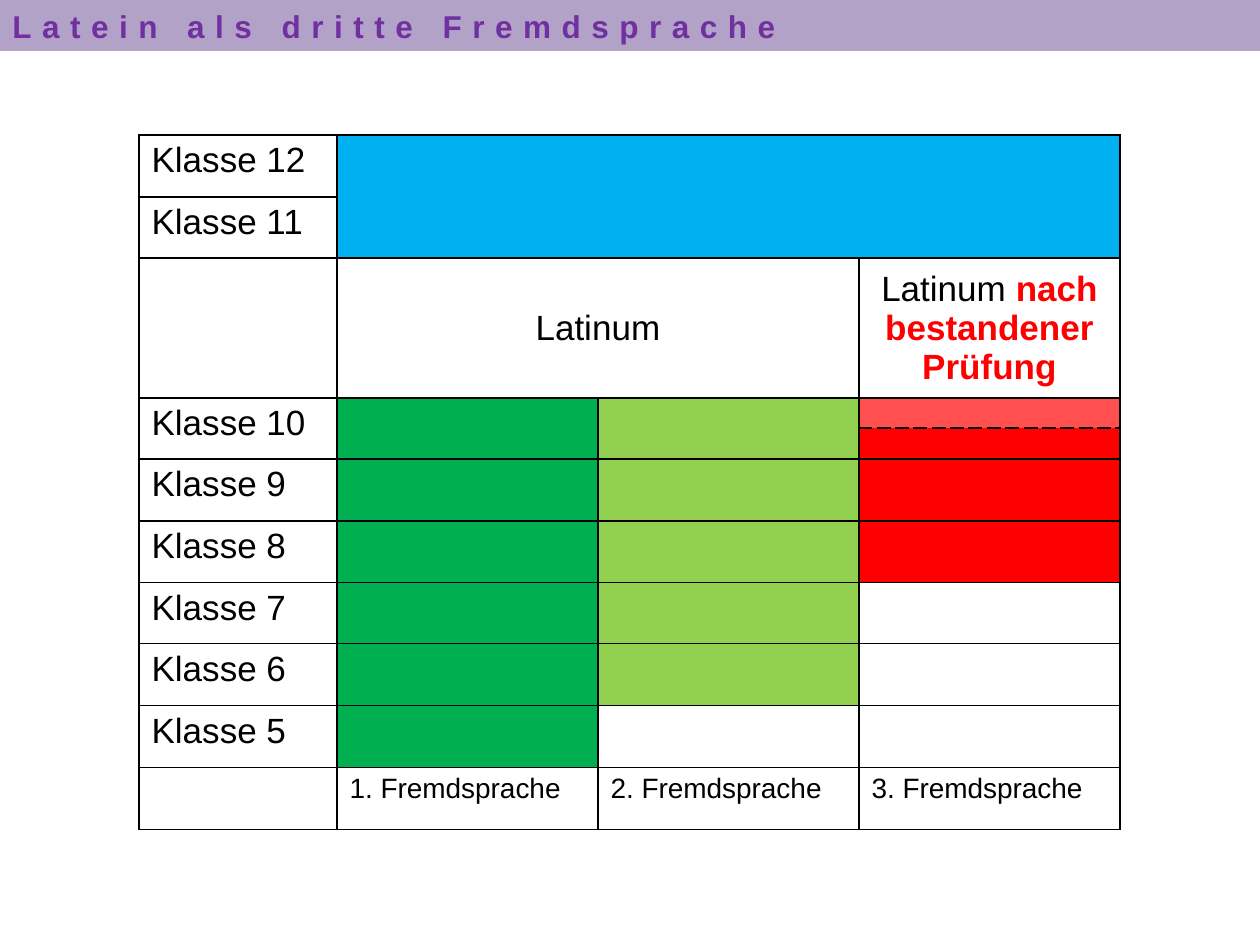
"""Build a slide that shows Latin as first, second or third foreign language by school year."""
from itertools import product

from lxml.etree import SubElement
from pptx import Presentation
from pptx.dml.color import RGBColor
from pptx.enum.shapes import MSO_SHAPE
from pptx.enum.text import MSO_ANCHOR, PP_ALIGN
from pptx.oxml.ns import qn
from pptx.util import Pt

EMU_PER_PX = 914400 / 126
BLACK = RGBColor(0x00, 0x00, 0x00)
PURPLE = RGBColor(0x70, 0x30, 0xA0)
LILAC = RGBColor(0xB3, 0xA2, 0xC7)
BLUE = RGBColor(0x00, 0xB0, 0xF0)
DARK_GREEN = RGBColor(0x00, 0xB0, 0x50)
LIGHT_GREEN = RGBColor(0x92, 0xD0, 0x50)
RED = RGBColor(0xFF, 0x00, 0x00)
PALE_RED = RGBColor(0xFF, 0x4F, 0x4F)

COLUMN_WIDTHS = [198, 261, 261, 261]
ROW_HEIGHTS = [62, 61, 140, 30, 31, 62, 62, 61, 62, 62, 62]
CLASS_ROWS = {12: 0, 11: 1, 10: 3, 9: 5, 8: 6, 7: 7, 6: 8, 5: 9}
EXAM_ROW, HALF_YEAR_ROW, LANGUAGE_ROW = 2, 3, 10
MERGES = [(0, 1, 1, 3), (2, 1, 2, 2)] + [(3, col, 4, col) for col in range(3)]
LESSONS = [(1, 3, 9, DARK_GREEN), (2, 3, 8, LIGHT_GREEN), (3, 4, 6, RED)]


def px(length):
    return round(length * EMU_PER_PX)


def style_font(font, size, color=BLACK, bold=False):
    font.name = "Arial"
    font.size = Pt(size)
    font.bold = bold
    font.color.rgb = color


def add_title(slide, text):
    bar = slide.shapes.add_shape(MSO_SHAPE.RECTANGLE, 0, 0, px(1260), px(51))
    bar.shadow.inherit = False
    bar.fill.solid()
    bar.fill.fore_color.rgb = LILAC
    bar.line.fill.background()
    title = bar.text_frame.paragraphs[0]
    title.alignment = PP_ALIGN.LEFT
    run = title.add_run()
    run.text = text
    style_font(title.font, 18, PURPLE, True)
    style_font(run.font, 18, PURPLE, True)
    run.font._element.set("spc", "600")


def border_cell(cell, dashed_side=None):
    properties = cell._tc.get_or_add_tcPr()
    for side in ("lnL", "lnR", "lnT", "lnB"):
        line = SubElement(properties, qn(f"a:{side}"), w=str(Pt(1)))
        color = SubElement(line, qn("a:solidFill"))
        SubElement(color, qn("a:srgbClr"), val=str(BLACK))
        dash = "sysDash" if side == dashed_side else "solid"
        SubElement(line, qn("a:prstDash"), val=dash)


def fill_cell(cell, color):
    cell.fill.solid()
    cell.fill.fore_color.rgb = color


def prepare_cell(cell, dashed_side=None):
    border_cell(cell, dashed_side)
    cell.fill.background()
    cell.margin_top = cell.margin_bottom = px(6)
    cell.text_frame.paragraphs[0]._p.get_or_add_endParaRPr().set("sz", "800")


def write_cell(cell, *parts, size=20, centered=False):
    paragraph = cell.text_frame.paragraphs[0]
    for text, color, bold in parts:
        run = paragraph.add_run()
        run.text = text
        style_font(run.font, size, color, bold)
    if centered:
        paragraph.alignment = PP_ALIGN.CENTER
        cell.vertical_anchor = MSO_ANCHOR.MIDDLE


def add_school_table(slide):
    rows, columns = len(ROW_HEIGHTS), len(COLUMN_WIDTHS)
    frame = slide.shapes.add_table(
        rows, columns, px(139), px(135), px(sum(COLUMN_WIDTHS)), px(sum(ROW_HEIGHTS)))
    table = frame.table
    table.first_row = table.horz_banding = False
    for column, width in zip(table.columns, COLUMN_WIDTHS):
        column.width = px(width)
    for row, height in zip(table.rows, ROW_HEIGHTS):
        row.height = px(height)

    dashed_sides = {(HALF_YEAR_ROW, 3): "lnB", (HALF_YEAR_ROW + 1, 3): "lnT"}
    for place in product(range(rows), range(columns)):
        prepare_cell(table.cell(*place), dashed_sides.get(place))
    for top, left, bottom, right in MERGES:
        table.cell(top, left).merge(table.cell(bottom, right))
    return table


def fill_school_table(table):
    for year, row in CLASS_ROWS.items():
        write_cell(table.cell(row, 0), (f"Klasse {year}", BLACK, False))
    for language in (1, 2, 3):
        write_cell(table.cell(LANGUAGE_ROW, language),
                   (f"{language}. Fremdsprache", BLACK, False), size=16)
    write_cell(table.cell(EXAM_ROW, 1), ("Latinum", BLACK, False), centered=True)
    write_cell(table.cell(EXAM_ROW, 3), ("Latinum ", BLACK, False),
               ("nach bestandener Prüfung", RED, True), centered=True)

    fill_cell(table.cell(0, 1), BLUE)
    fill_cell(table.cell(HALF_YEAR_ROW, 3), PALE_RED)
    for column, first, last, color in LESSONS:
        for row in range(first, last + 1):
            fill_cell(table.cell(row, column), color)
    for row, column in product((HALF_YEAR_ROW, HALF_YEAR_ROW + 1), range(1, 4)):
        half_year = table.cell(row, column)
        half_year.margin_top = half_year.margin_bottom = 0


def main():
    presentation = Presentation()
    presentation.slide_width = px(1260)
    presentation.slide_height = px(945)
    slide = presentation.slides.add_slide(presentation.slide_layouts[6])
    fill_school_table(add_school_table(slide))
    add_title(slide, "Latein als dritte Fremdsprache")
    presentation.save("out.pptx")


if __name__ == "__main__":
    main()
